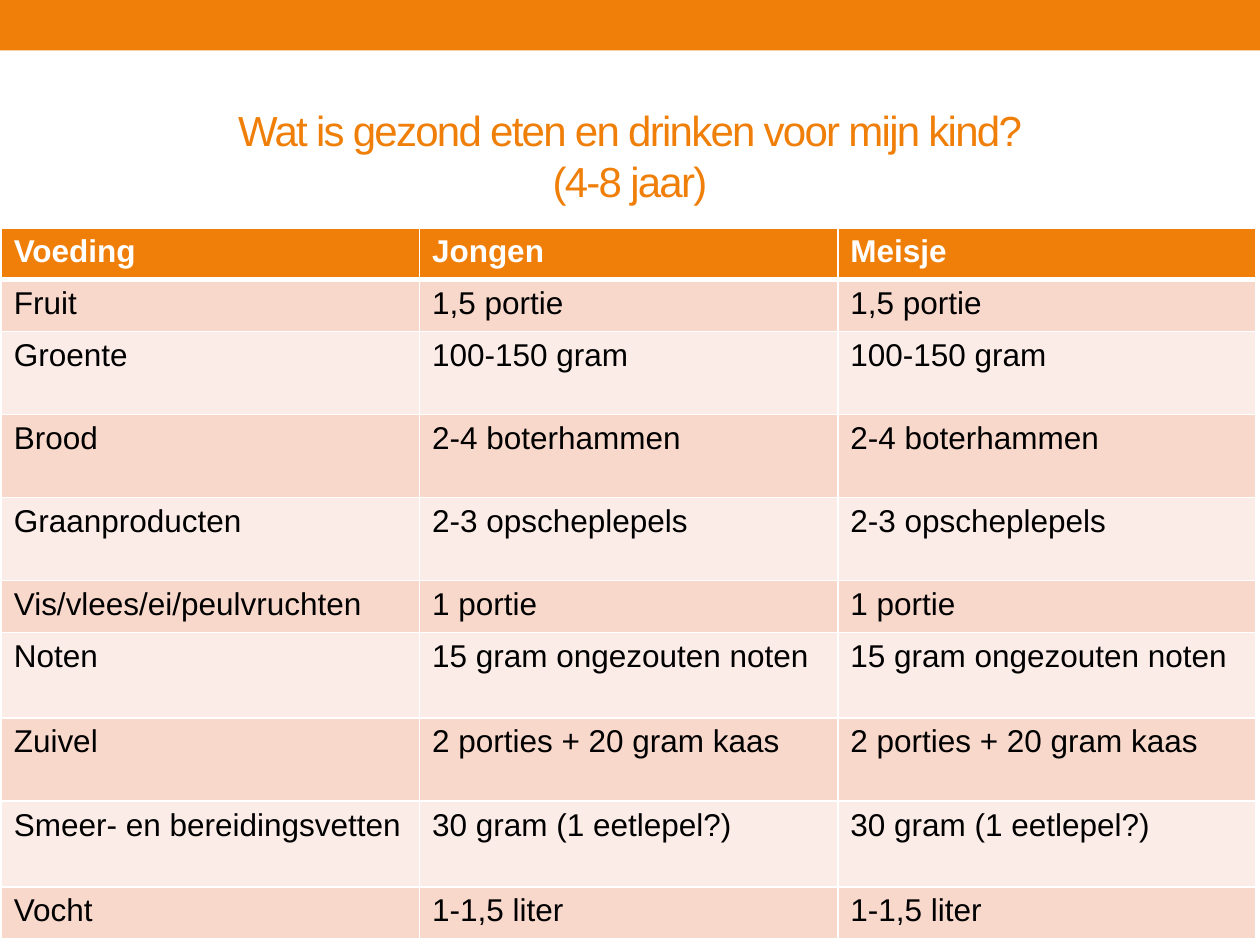
from dataclasses import dataclass

from lxml import etree
from pptx import Presentation
from pptx import util as u
from pptx.dml.color import RGBColor
from pptx.enum import shapes, text
from pptx.oxml.ns import qn

ORANGE = RGBColor(0xF0, 0x7F, 0x09)
PINK = RGBColor(0xF9, 0xD8, 0xCC)
PALE_PINK = RGBColor(0xFC, 0xEC, 0xE7)
WHITE = RGBColor(0xFF, 0xFF, 0xFF)
BLACK = RGBColor(0, 0, 0)
FONT = "Arial"

SLIDE_WIDTH, SLIDE_HEIGHT = u.Inches(10), u.Inches(7.5)
COLUMN_WIDTH = u.Inches(3.32)
LOW, TALL, TALLER = 0.41, 0.66, 0.68


@dataclass(frozen=True)
class Advice:
    food: str
    amount: str
    height: float


HEADINGS = ("Voeding", "Jongen", "Meisje")
ADVICE = (
    Advice("Fruit", "1,5 portie", LOW),
    Advice("Groente", "100-150 gram", TALL),
    Advice("Brood", "2-4 boterhammen", TALL),
    Advice("Graanproducten", "2-3 opscheplepels", TALL),
    Advice("Vis/vlees/ei/peulvruchten", "1 portie", LOW),
    Advice("Noten", "15 gram ongezouten noten", TALLER),
    Advice("Zuivel", "2 porties + 20 gram kaas", TALL),
    Advice("Smeer- en bereidingsvetten", "30 gram (1 eetlepel?)", TALLER),
    Advice("Vocht", "1-1,5 liter", LOW),
)


def format_runs(paragraph, size: float, color: RGBColor, bold: bool = False) -> None:
    for run in paragraph.runs:
        run.font.name = FONT
        run.font.size = u.Pt(size)
        run.font.bold = bold
        run.font.color.rgb = color


def add_band(slide) -> None:
    band = slide.shapes.add_shape(
        shapes.MSO_SHAPE.RECTANGLE, 0, 0, SLIDE_WIDTH, u.Inches(0.4))
    band.shadow.inherit = False
    band.fill.solid()
    band.fill.fore_color.rgb = ORANGE
    band.line.fill.background()


def add_title(slide) -> None:
    margin = int(SLIDE_WIDTH * 0.05)
    title = slide.shapes.add_textbox(
        margin, u.Inches(0.69), SLIDE_WIDTH - 2 * margin, u.Inches(1.08))
    frame = title.text_frame
    frame.word_wrap = True
    frame.vertical_anchor = text.MSO_ANCHOR.MIDDLE
    paragraph = frame.paragraphs[0]
    paragraph.text = "Wat is gezond eten en drinken voor mijn kind?\v(4-8 jaar)"
    paragraph.alignment = text.PP_ALIGN.CENTER
    format_runs(paragraph, 24, ORANGE)
    for run in paragraph.runs:
        run.font._element.set("spc", "-100")


def set_borders(cell, **widths: float) -> None:
    """Draw white borders; widths are points by side: L, R, T and B, in that order."""
    properties = cell._tc.get_or_add_tcPr()
    for side, width in widths.items():
        line = etree.SubElement(properties, qn(f"a:ln{side}"), w=str(u.Pt(width)))
        fill = etree.SubElement(line, qn("a:solidFill"))
        etree.SubElement(fill, qn("a:srgbClr"), val=str(WHITE))


def fill_row(table, row: int, values: tuple[str, ...], height: float) -> None:
    is_header = row == 0
    fill = ORANGE if is_header else PINK if row % 2 else PALE_PINK
    table.rows[row].height = u.Inches(height)
    for column, value in enumerate(values):
        cell = table.cell(row, column)
        set_borders(cell, L=1, R=1, T=3 if row == 1 else 1, B=3 if is_header else 1)
        cell.fill.solid()
        cell.fill.fore_color.rgb = fill
        cell.text_frame.text = value
        format_runs(cell.text_frame.paragraphs[0], 18,
                    WHITE if is_header else BLACK, is_header)


def add_advice_table(slide) -> None:
    height = LOW + sum(advice.height for advice in ADVICE)
    table = slide.shapes.add_table(
        len(ADVICE) + 1, len(HEADINGS), u.Inches(0.01), u.Inches(1.81),
        COLUMN_WIDTH * len(HEADINGS), u.Inches(height)).table
    for column in table.columns:
        column.width = COLUMN_WIDTH
    fill_row(table, 0, HEADINGS, LOW)
    for row, advice in enumerate(ADVICE, start=1):
        fill_row(table, row, (advice.food, advice.amount, advice.amount), advice.height)


def main() -> None:
    presentation = Presentation()
    presentation.slide_width, presentation.slide_height = SLIDE_WIDTH, SLIDE_HEIGHT
    slide = presentation.slides.add_slide(presentation.slide_layouts[6])
    add_band(slide)
    add_title(slide)
    add_advice_table(slide)
    presentation.save("out.pptx")


if __name__ == "__main__":
    main()
